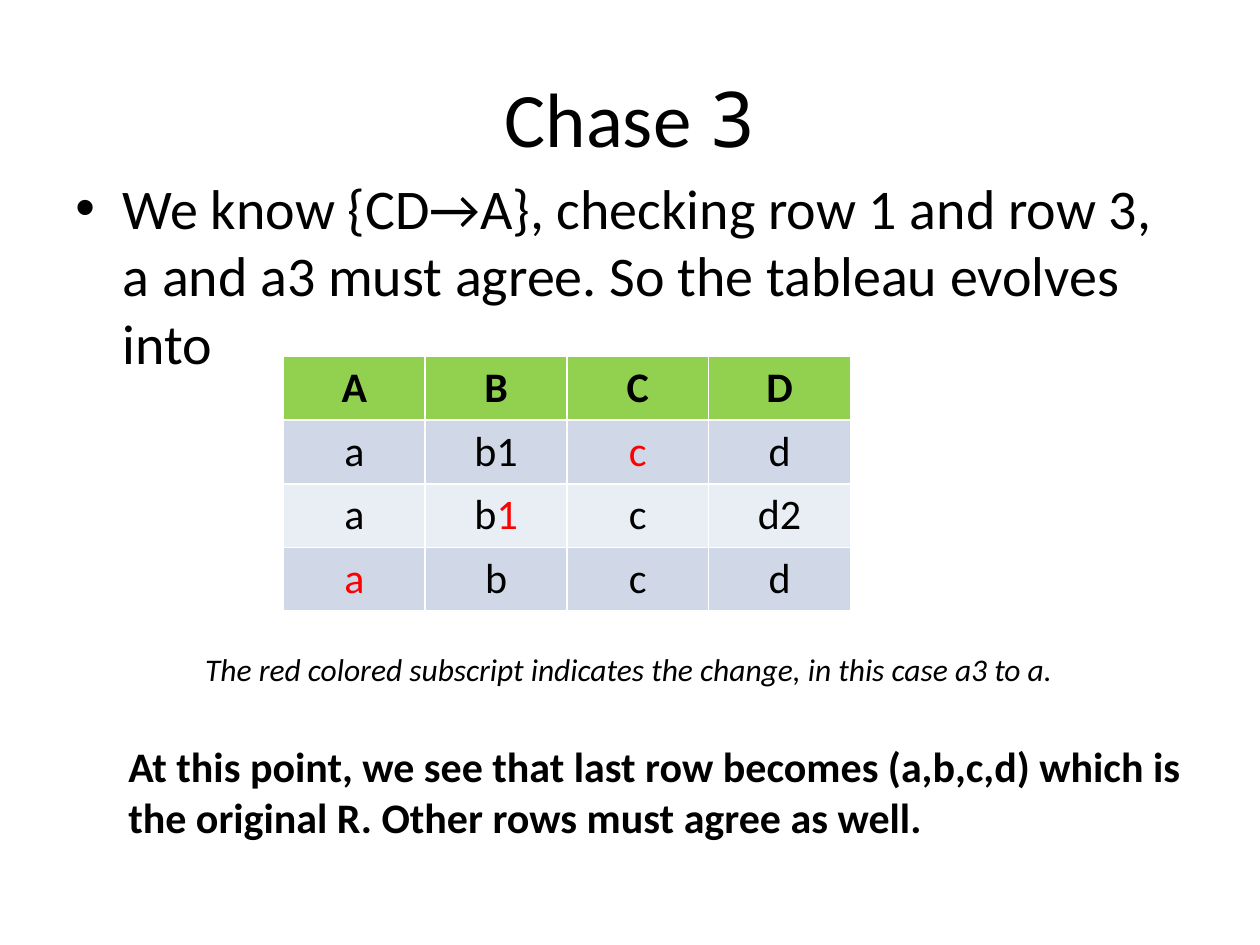
import pptx
import pptx.dml.color
import pptx.enum.text
import pptx.util
import lxml.etree

RGBColor = pptx.dml.color.RGBColor
BLACK = RGBColor(0x00, 0x00, 0x00)
RED = RGBColor(0xFF, 0x00, 0x00)
GREEN = RGBColor(0x92, 0xD0, 0x50)
BANDS = [RGBColor(0xD0, 0xD8, 0xE8), RGBColor(0xE9, 0xED, 0xF4)]
CENTER = pptx.enum.text.PP_ALIGN.CENTER
MIDDLE = pptx.enum.text.MSO_ANCHOR.MIDDLE

deck = pptx.Presentation()
deck.slide_width = pptx.util.Inches(10)
deck.slide_height = pptx.util.Inches(7.5)
page = deck.slides.add_slide(deck.slide_layouts[6])

# The page is a grid of 100 columns and 75 rows
COLUMN = deck.slide_width // 100
ROW = deck.slide_height // 75


def add_box(left, top, width, height, wrap=True):
    box = page.shapes.add_textbox(
        int(left * COLUMN), int(top * ROW), int(width * COLUMN), int(height * ROW))
    box.text_frame.word_wrap = wrap
    return box.text_frame


def write(para, text, size=24, color=BLACK, font="Calibri",
          bold=False, italic=False, align=None):
    span = para.add_run()
    span.text = text
    span.font.size = pptx.util.Pt(size)
    span.font.name = font
    span.font.color.rgb = color
    span.font.bold = bold
    span.font.italic = italic
    if align is not None:
        para.alignment = align


# Title
title = add_box(5, 3, 90, 12.5)
title.vertical_anchor = MIDDLE
write(title.paragraphs[0], "Chase ", size=44, align=CENTER)
write(title.paragraphs[0], "3", size=44, font="Noto Sans Mono")

# Bulleted statement
body = add_box(5, 13.3, 90, 49.5)
para = body.paragraphs[0]
write(para, "We know {CD→A}, checking row 1 and row 3, "
      "a and a3 must agree. So the tableau evolves into", size=32)
para.space_before = pptx.util.Pt(0.2 * 32)
properties = para._p.get_or_add_pPr()
indent = int(3.75 * COLUMN)
properties.set("marL", str(indent))
properties.set("indent", str(-indent))
namespace = "{http://schemas.openxmlformats.org/drawingml/2006/main}"
lxml.etree.SubElement(properties, namespace + "buFont", typeface="Arial")
lxml.etree.SubElement(properties, namespace + "buChar", char="•")

# Tableau: each cell is its unchanged text and its changed (red) text
tableau = [
    [("A", ""), ("B", ""), ("C", ""), ("D", "")],
    [("a", ""), ("b1", ""), ("", "c"), ("d", "")],
    [("a", ""), ("b", "1"), ("c", ""), ("d2", "")],
    [("", "a"), ("b", ""), ("c", ""), ("d", "")],
]
table = page.shapes.add_table(
    4, 4, int(22.5 * COLUMN), int(28.3 * ROW), 45 * COLUMN, int(20.2 * ROW)).table
for row_number, cells in enumerate(tableau):
    header = row_number == 0
    for column_number, parts in enumerate(cells):
        cell = table.cell(row_number, column_number)
        cell.fill.solid()
        cell.fill.fore_color.rgb = GREEN if header else BANDS[(row_number - 1) % 2]
        for text, color in zip(parts, (BLACK, RED)):
            if text:
                write(cell.text_frame.paragraphs[0], text, color=color,
                      bold=header, align=CENTER)

# Caption
caption = add_box(15.3, 51.1, 69.4, 4, wrap=False)
write(caption.paragraphs[0],
      "The red colored subscript indicates the change, in this case a3 to a.",
      size=18, italic=True)

# Conclusion
conclusion = add_box(9.2, 58.3, 86.4, 9.1, wrap=False)
write(conclusion.paragraphs[0],
      "At this point, we see that last row becomes (a,b,c,d) which is", bold=True)
write(conclusion.add_paragraph(),
      "the original R. Other rows must agree as well.", bold=True)

deck.save("out.pptx")
